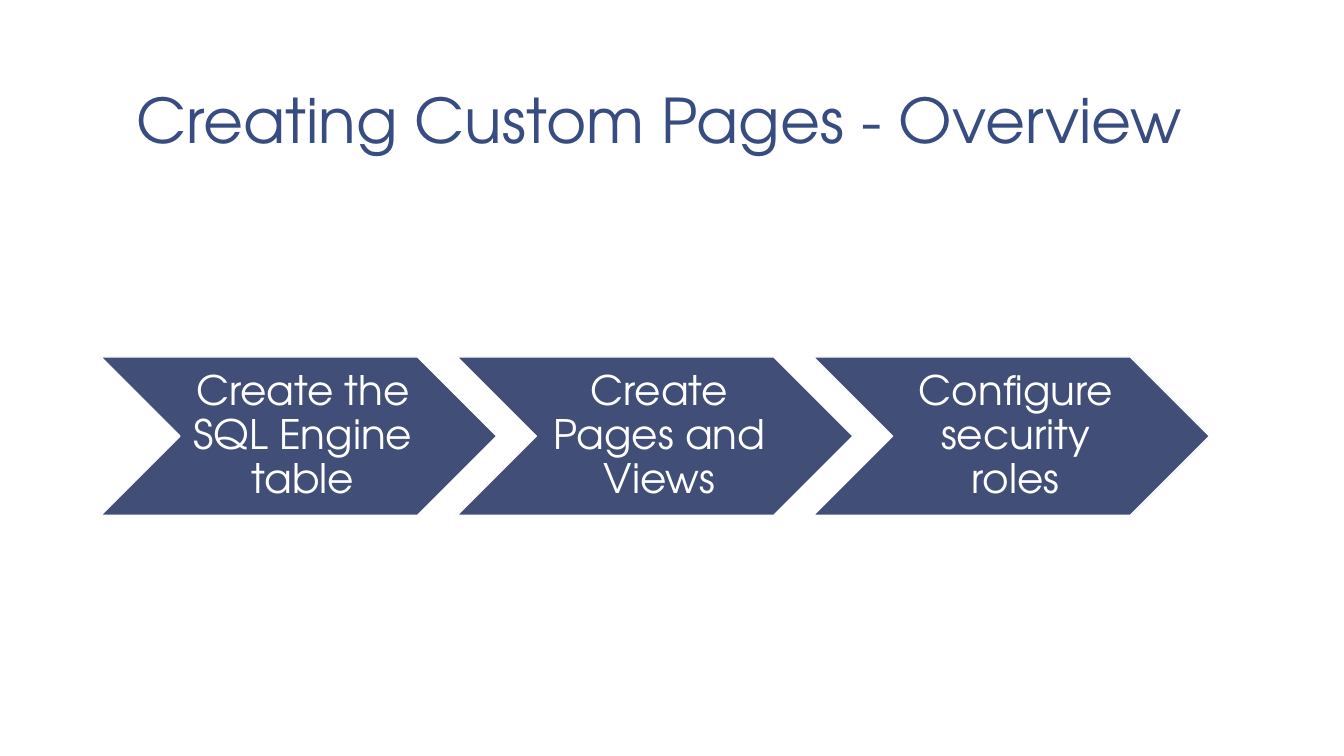
from dataclasses import dataclass

from pptx import Presentation
from pptx.dml.color import RGBColor
from pptx.enum.shapes import MSO_SHAPE
from pptx.enum.text import MSO_ANCHOR, PP_ALIGN
from pptx.slide import Slide
from pptx.text.text import TextFrame
from pptx.util import Pt

CHEVRON = MSO_SHAPE.CHEVRON
BOTTOM, MIDDLE = MSO_ANCHOR.BOTTOM, MSO_ANCHOR.MIDDLE
LEFT, CENTER = PP_ALIGN.LEFT, PP_ALIGN.CENTER

FONT = "TeX Gyre Adventor"
TITLE_BLUE = RGBColor(0x37, 0x4C, 0x81)
STEP_BLUE = RGBColor(0x41, 0x4E, 0x77)
WHITE = RGBColor(0xFF, 0xFF, 0xFF)

STEP_LEFT, STEP_TOP = 72, 255
STEP_WIDTH, STEP_HEIGHT = 282.8, 113.1
STEP_PITCH = 0.9 * STEP_WIDTH
STEPS = ["Create the SQL Engine table", "Create Pages and Views", "Configure security roles"]


@dataclass(frozen=True)
class TextStyle:
    size: float
    color: RGBColor
    align: PP_ALIGN
    anchor: MSO_ANCHOR
    line_spacing: float
    insets: tuple[float, float, float, float]  # left, top, right, bottom


TITLE_STYLE = TextStyle(44, TITLE_BLUE, LEFT, BOTTOM, 0.85, (9.6, 4.8, 9.6, 4.8))
STEP_STYLE = TextStyle(29, WHITE, CENTER, MIDDLE, 0.9, (9.3, 3.1, 3.1, 3.1))


def write_text(tf: TextFrame, text: str, style: TextStyle) -> None:
    tf.text = text
    tf.word_wrap = True
    tf.vertical_anchor = style.anchor
    tf.margin_left, tf.margin_top, tf.margin_right, tf.margin_bottom = map(Pt, style.insets)
    p = tf.paragraphs[0]
    p.alignment = style.align
    p.line_spacing = style.line_spacing
    r = p.runs[0]
    r.font.name = FONT
    r.font.size = Pt(style.size)
    r.font.color.rgb = style.color


def add_title(s: Slide, text: str) -> None:
    box = s.shapes.add_textbox(Pt(88), Pt(6), Pt(800), Pt(110))
    write_text(box.text_frame, text, TITLE_STYLE)


def add_step(s: Slide, left: float, text: str) -> None:
    sp = s.shapes.add_shape(CHEVRON, Pt(left), Pt(STEP_TOP), Pt(STEP_WIDTH), Pt(STEP_HEIGHT))
    sp.shadow.inherit = False
    sp.fill.solid()
    sp.fill.fore_color.rgb = STEP_BLUE
    sp.line.color.rgb = WHITE
    sp.line.width = Pt(1)
    write_text(sp.text_frame, text, STEP_STYLE)


def main() -> None:
    prs = Presentation()
    prs.slide_width, prs.slide_height = Pt(960), Pt(540)
    s = prs.slides.add_slide(prs.slide_layouts[6])
    add_title(s, "Creating Custom Pages - Overview")
    for i, text in enumerate(STEPS):
        add_step(s, STEP_LEFT + i * STEP_PITCH, text)
    prs.save("out.pptx")


if __name__ == "__main__":
    main()
